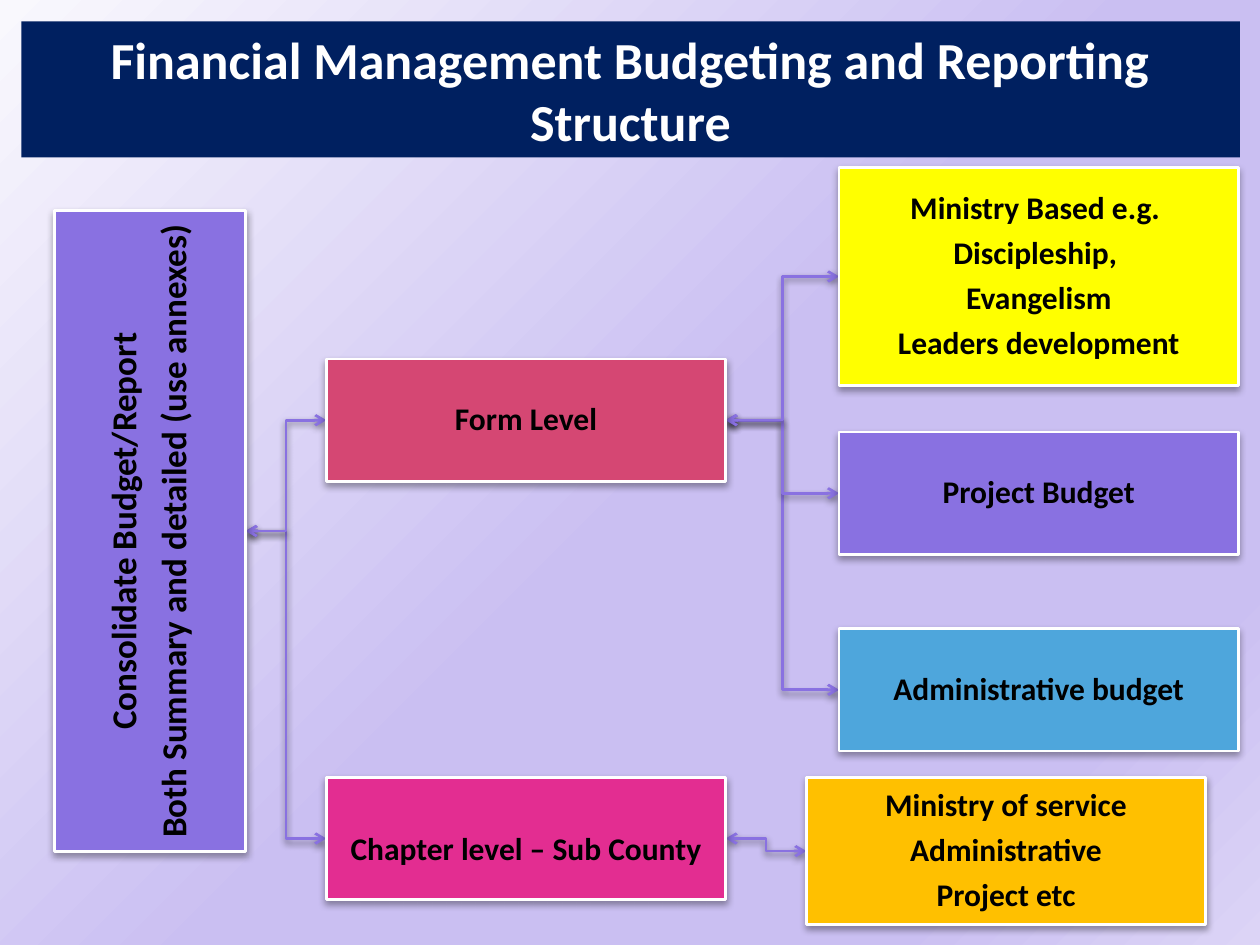
import pptx
import pptx.util
import pptx.dml.color
import pptx.enum.shapes
import pptx.enum.text
import pptx.oxml
import pptx.oxml.ns
from lxml import etree

Inches, Pt = pptx.util.Inches, pptx.util.Pt
qn = pptx.oxml.ns.qn
COLORS = {
    "navy": "002060", "violet": "8971E1", "rose": "D54773", "yellow": "FFFF00",
    "blue": "4EA6DC", "pink": "E32D91", "amber": "FFC000",
    "white": "FFFFFF", "black": "000000",
    "bg_light": "F9F8FD", "bg_mid": "CABFF2", "bg_edge": "DCD4F6",
}
LEFT, RIGHT = 1, 3  # connection sites of a rectangle

# key: (left, top, width, height), fill, line spacing, paragraphs
BOXES = {
    "form": ((2.59, 2.85, 3.17, 0.97), "rose", 0.9, ["Form Level"]),
    "ministry": ((6.66, 1.33, 3.17, 1.73), "yellow", 0.9,
                 ["Ministry Based e.g. ", "Discipleship, ", "Evangelism",
                  "Leaders development"]),
    "project": ((6.66, 3.43, 3.17, 0.97), "violet", 0.9, ["Project Budget"]),
    "admin": ((6.66, 4.99, 3.17, 0.97), "blue", 0.9, ["Administrative budget"]),
    "chapter": ((2.59, 6.17, 3.17, 0.97), "pink", 1.5, ["Chapter level – Sub County"]),
    "service": ((6.4, 6.17, 3.17, 1.17), "amber", 0.9,
                ["Ministry of service", "Administrative", "Project etc"]),
}
LINKS = [("chapter", "service"), ("report", "chapter"), ("form", "admin"),
         ("form", "project"), ("form", "ministry"), ("report", "form")]


def rgb(name):
    return pptx.dml.color.RGBColor.from_string(COLORS[name])


def add_shadow(spPr, alpha):
    effects = spPr.find(qn("a:effectLst"))
    if effects is None:
        effects = etree.SubElement(spPr, qn("a:effectLst"))
    shadow = etree.SubElement(effects, qn("a:outerShdw"), blurRad=str(Pt(4)),
                              dist=str(Pt(2)), dir="5400000", rotWithShape="0")
    color = etree.SubElement(shadow, qn("a:srgbClr"), val=COLORS["black"])
    etree.SubElement(color, qn("a:alpha"), val=str(alpha * 1000))


def set_background(s):
    """Radial gradient spreading from the top left corner."""
    stops = [(0, "bg_light", 100), (52, "bg_mid", 84), (83, "bg_mid", 100),
             (100, "bg_edge", 100)]
    gs = "".join(
        f'<a:gs pos="{pos * 1000}"><a:srgbClr val="{COLORS[name]}">'
        f'<a:alpha val="{alpha * 1000}"/></a:srgbClr></a:gs>'
        for pos, name, alpha in stops)
    s.background.fill.gradient()
    old = s._element.find(".//" + qn("a:gradFill"))
    old.getparent().replace(old, pptx.oxml.parse_xml(
        f'<a:gradFill {pptx.oxml.ns.nsdecls("a")} rotWithShape="1"><a:gsLst>{gs}</a:gsLst>'
        '<a:path path="circle"><a:fillToRect r="100000" b="100000"/></a:path></a:gradFill>'))


def add_title(s, box, text):
    sp = s.shapes.title
    sp.left, sp.top, sp.width, sp.height = map(Inches, box)
    sp.fill.solid()
    sp.fill.fore_color.rgb = rgb("navy")
    tf = sp.text_frame
    tf.text = text
    tf.word_wrap = True
    tf.auto_size = pptx.enum.text.MSO_AUTO_SIZE.NONE
    tf.vertical_anchor = pptx.enum.text.MSO_ANCHOR.MIDDLE
    p = tf.paragraphs[0]
    p.alignment = pptx.enum.text.PP_ALIGN.CENTER
    p.font.name, p.font.size, p.font.bold = "Calibri", Pt(29.7), True
    p.font.color.rgb = rgb("white")


def add_box(s, box, fill, spacing, lines, size=18):
    sp = s.shapes.add_shape(pptx.enum.shapes.MSO_SHAPE.RECTANGLE, *map(Inches, box))
    sp.fill.solid()
    sp.fill.fore_color.rgb = rgb(fill)
    sp.line.color.rgb = rgb("white")
    sp.line.width = Pt(1.57)
    sp.shadow.inherit = False
    add_shadow(sp._element.spPr, 35)
    tf = sp.text_frame
    tf.word_wrap = True
    tf.vertical_anchor = pptx.enum.text.MSO_ANCHOR.MIDDLE
    tf.margin_left = tf.margin_right = tf.margin_top = tf.margin_bottom = Inches(0.01)
    tf.text = "\n".join(lines)
    for p in tf.paragraphs:
        p.alignment = pptx.enum.text.PP_ALIGN.CENTER
        p.line_spacing = spacing
        p.space_after = Pt(0.35 * size)
        p.font.name, p.font.size, p.font.bold = "Calibri", Pt(size), True
        p.font.color.rgb = rgb("black")
    return sp


def add_report_box(s, box):
    """Tall box whose text reads upwards."""
    sp = add_box(s, box, "violet", 0.9,
                 ["Consolidate Budget/Report", "Both Summary and detailed (use annexes)"], 20)
    sp.text_frame._txBody.bodyPr.set("vert", "vert270")
    return sp


def add_link(s, start, end):
    """Elbow with an arrowhead at both ends, placed behind the boxes."""
    cx = s.shapes.add_connector(pptx.enum.shapes.MSO_CONNECTOR.ELBOW, 0, 0, 0, 0)
    cx.begin_connect(start, RIGHT)
    cx.end_connect(end, LEFT)
    cx.line.color.rgb = rgb("violet")
    cx.line.width = Pt(1.57)
    ln = cx.line._get_or_add_ln()
    for tag in ("a:headEnd", "a:tailEnd"):
        etree.SubElement(ln, qn(tag), type="arrow")
    add_shadow(cx._element.spPr, 45)
    start._element.getparent().insert(3, cx._element)


def main():
    prs = pptx.Presentation()
    prs.slide_width, prs.slide_height = Inches(10), Inches(7.5)
    s = prs.slides.add_slide(prs.slide_layouts[5])
    set_background(s)
    add_title(s, (0.17, 0.17, 9.67, 1.08),
              "Financial Management Budgeting and Reporting Structure")
    boxes = {"report": add_report_box(s, (0.43, 1.67, 1.52, 5.09))}
    for key, spec in BOXES.items():
        boxes[key] = add_box(s, *spec)
    for start, end in reversed(LINKS):
        add_link(s, boxes[start], boxes[end])
    prs.save("out.pptx")


if __name__ == "__main__":
    main()
